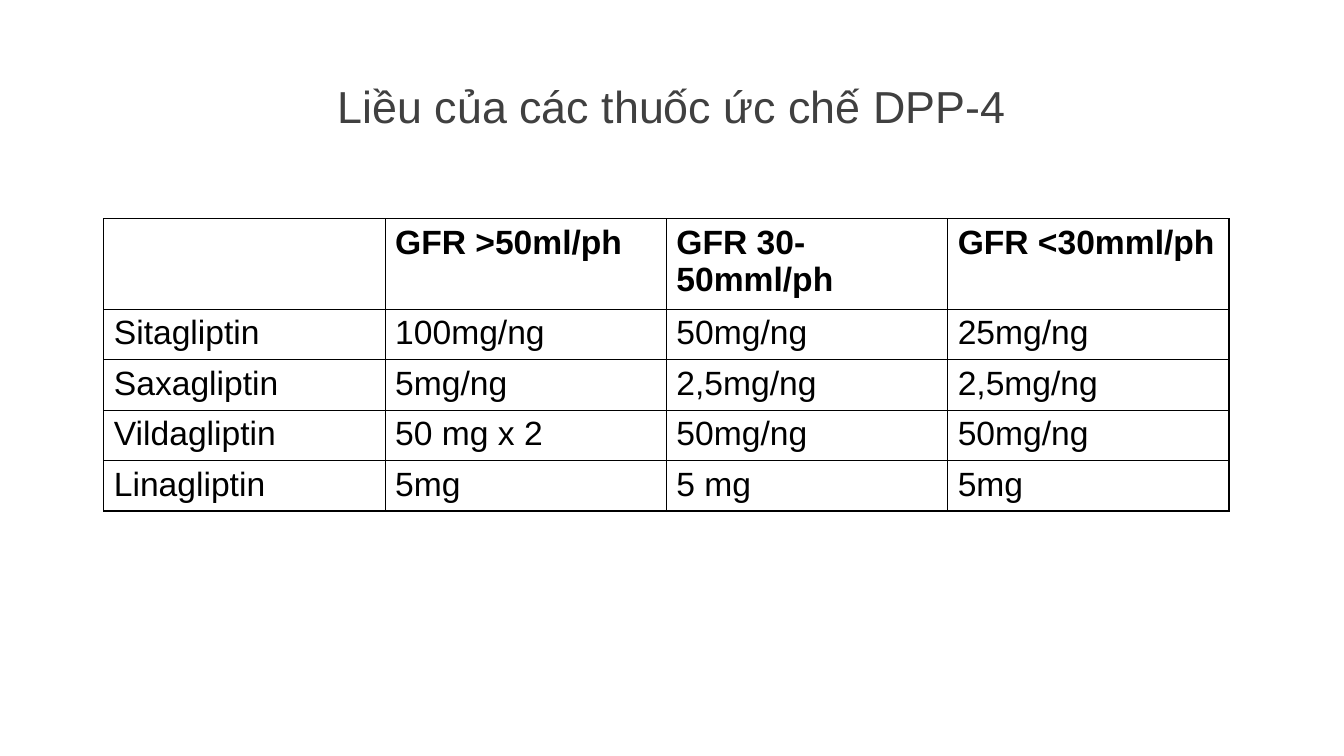
from dataclasses import dataclass

from lxml import etree
from pptx import Presentation
from pptx import util as u
from pptx.dml.color import RGBColor
from pptx.enum import text
from pptx.oxml import ns

BLACK = RGBColor(0x00, 0x00, 0x00)
GRAY = RGBColor(0x40, 0x40, 0x40)
FONT = "Arial"
WIDE, HIGH = 13.33, 7.5


@dataclass(frozen=True)
class Box:
    """A frame in inches."""
    left: float
    top: float
    width: float
    height: float

    def frame(self) -> list[u.Inches]:
        return [u.Inches(n) for n in (self.left, self.top, self.width, self.height)]


@dataclass(frozen=True)
class Row:
    cells: tuple[str, ...]
    height: float = 0.5
    bold: bool = False


HEAD = Box(0.15 * WIDE, 0.42, 0.7 * WIDE, HIGH / 6)
GRID = Box(1.03, 2.17, 11.16, 2.9)
ROWS = (
    Row(("", "GFR >50ml/ph", "GFR 30-50mml/ph", "GFR <30mml/ph"), 0.9, True),
    Row(("Sitagliptin", "100mg/ng", "50mg/ng", "25mg/ng")),
    Row(("Saxagliptin", "5mg/ng", "2,5mg/ng", "2,5mg/ng")),
    Row(("Vildagliptin", "50 mg x 2", "50mg/ng", "50mg/ng")),
    Row(("Linagliptin", "5mg", "5 mg", "5mg")),
)


def add_run(para, words: str, size: int, color: RGBColor, bold: bool = False) -> None:
    run = para.add_run()
    run.text = words
    font = run.font
    font.name, font.size, font.bold = FONT, u.Pt(size), bold
    font.color.rgb = color


def add_title(slide, words: str) -> None:
    title = slide.shapes.title
    title.left, title.top, title.width, title.height = HEAD.frame()
    frame = title.text_frame
    frame.word_wrap = True
    frame.vertical_anchor = text.MSO_ANCHOR.MIDDLE
    para = frame.paragraphs[0]
    para.alignment = text.PP_ALIGN.CENTER
    add_run(para, words, 32, GRAY)


def add_lines(cell) -> None:
    """Draw the four borders; they must come before the cell's fill."""
    props = cell._tc.get_or_add_tcPr()
    for spot, side in enumerate(("lnL", "lnR", "lnT", "lnB")):
        line = etree.Element(ns.qn(f"a:{side}"), w=str(u.Pt(1)))
        fill = etree.SubElement(line, ns.qn("a:solidFill"))
        etree.SubElement(fill, ns.qn("a:srgbClr"), val=str(BLACK))
        props.insert(spot, line)


def add_grid(slide, rows: tuple[Row, ...]) -> None:
    count = len(rows[0].cells)
    table = slide.shapes.add_table(len(rows), count, *GRID.frame()).table
    table.first_row = table.horz_banding = False
    for col in table.columns:
        col.width = u.Inches(GRID.width / count)
    for line, row in zip(table.rows, rows):
        line.height = u.Inches(row.height)
        for cell, words in zip(line.cells, row.cells):
            cell.fill.background()
            add_lines(cell)
            cell.margin_left = cell.margin_right = u.Inches(0.1)
            cell.margin_top = cell.margin_bottom = u.Inches(0.05)
            if words:
                add_run(cell.text_frame.paragraphs[0], words, 24, BLACK, row.bold)


def main() -> None:
    deck = Presentation()
    deck.slide_width, deck.slide_height = u.Inches(WIDE), u.Inches(HIGH)
    slide = deck.slides.add_slide(deck.slide_layouts.get_by_name("Title Only"))
    add_title(slide, "Liều của các thuốc ức chế DPP-4")
    add_grid(slide, ROWS)
    deck.save("out.pptx")


if __name__ == "__main__":
    main()
